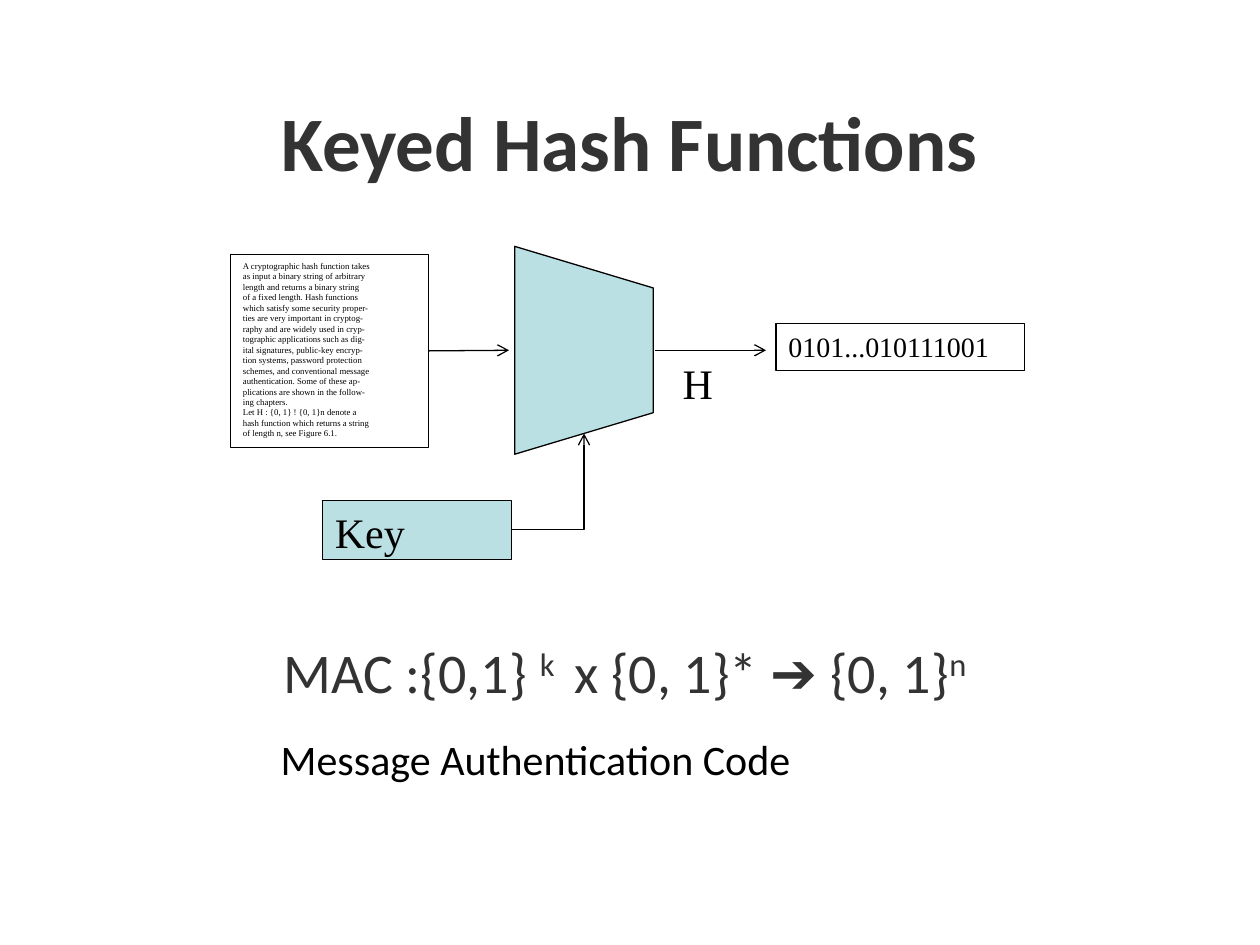
from lxml.etree import SubElement
from pptx import Presentation
from pptx.dml.color import RGBColor
from pptx.enum.shapes import MSO_CONNECTOR as CONN, MSO_SHAPE as SHAPE
from pptx.enum.text import MSO_ANCHOR as ANCHOR, PP_ALIGN as ALIGN
from pptx.oxml.ns import qn
from pptx.util import Inches, Pt

# Content
TITLE = "Keyed Hash Functions"
MESSAGE = [
    "A cryptographic hash function takes",
    "as input a binary string of arbitrary",
    "length and returns a binary string",
    "of a fixed length. Hash functions",
    "which satisfy some security proper-",
    "ties are very important in cryptog-",
    "raphy and are widely used in cryp-",
    "tographic applications such as dig-",
    "ital signatures, public-key encryp-",
    "tion systems, password protection",
    "schemes, and conventional message",
    "authentication. Some of these ap-",
    "plications are shown in the follow-",
    "ing chapters.",
    "Let H : {0, 1} ! {0, 1}n denote a",
    "hash function which returns a string",
    "of length n, see Figure 6.1.",
]
DIGEST = "0101...010111001"
# Runs of the formula: text, is superscript
FORMULA = [("MAC :{0,1} ", False), ("k ", True),
           (" x {0, 1}* ➔ {0, 1}", False), ("n", True)]
CAPTION = "Message Authentication Code"

THEME = {
    "sans": "Calibri", "serif": "Times New Roman",
    "ink": RGBColor(0x00, 0x00, 0x00), "heading": RGBColor(0x33, 0x33, 0x33),
    "fill": RGBColor(0xBB, 0xE0, 0xE3), "line": Pt(0.75),
    "title": 44, "formula": 32, "label": 24, "digest": 16, "message": 5,
}

# Places, in inches: left, top, width, height
MESSAGE_BOX = (1.83, 2.02, 1.57, 1.53)
DIGEST_BOX = (6.16, 2.57, 1.97, 0.37)
KEY_BOX = (2.56, 3.97, 1.5, 0.47)
HASH_BOX = (3.81, 2.23, 1.65, 1.1)  # before its quarter turn
FLOW_Y = HASH_BOX[1] + HASH_BOX[3] / 2
HASH_X = HASH_BOX[0] + HASH_BOX[2] / 2

prs = Presentation()
prs.slide_width, prs.slide_height = Inches(10), Inches(7.5)
shapes = prs.slides.add_slide(prs.slide_layouts[6]).shapes


def put_text(sp, lines, size, font="serif", color="ink", bold=False, align=ALIGN.LEFT):
    """Fill a shape; each line is a string or a list of (text, superscript) runs."""
    tf = sp.text_frame
    tf.word_wrap = True
    tf.vertical_anchor = ANCHOR.TOP
    for i, line in enumerate(lines):
        p = tf.paragraphs[0] if i == 0 else tf.add_paragraph()
        p.alignment = align
        for text, raised in [(line, False)] if isinstance(line, str) else line:
            r = p.add_run()
            r.text = text
            r.font.size, r.font.bold = Pt(THEME[size]), bold
            r.font.name, r.font.color.rgb = THEME[font], THEME[color]
            if raised:
                r.font._element.set("baseline", "30000")


def add_text(box, lines, size, **fmt):
    put_text(shapes.add_textbox(*map(Inches, box)), lines, size, **fmt)


def add_box(kind, box, filled=False):
    sp = shapes.add_shape(kind, *map(Inches, box))
    sp.shadow.inherit = False
    if filled:
        sp.fill.solid()
        sp.fill.fore_color.rgb = THEME["fill"]
    else:
        sp.fill.background()
    sp.line.color.rgb, sp.line.width = THEME["ink"], THEME["line"]
    return sp


def add_arrow(kind, start, end, source=None):
    cx = shapes.add_connector(kind, *map(Inches, start + end))
    if source is not None:
        cx.begin_connect(source, 3)
    cx.line.color.rgb, cx.line.width = THEME["ink"], THEME["line"]
    SubElement(cx.line._get_or_add_ln(), qn("a:tailEnd"), type="arrow")
    SubElement(cx._element.spPr, qn("a:effectLst"))
    return cx


# Title
add_text((0.75, 0.7, 8.5, 1.25), [TITLE], "title",
         font="sans", color="heading", bold=True, align=ALIGN.CENTER)

# Message, hash function and digest
message = add_box(SHAPE.RECTANGLE, MESSAGE_BOX)
put_text(message, MESSAGE, "message")
add_arrow(CONN.STRAIGHT, (3.4, FLOW_Y), (4.04, FLOW_Y), source=message)
hash_fn = add_box(SHAPE.FLOWCHART_MANUAL_OPERATION, HASH_BOX, filled=True)
hash_fn.rotation = 270
add_arrow(CONN.STRAIGHT, (5.2, FLOW_Y), (6.08, FLOW_Y))
add_text((5.32, 2.79, 0.6, 0.48), ["H"], "label")
put_text(add_box(SHAPE.RECTANGLE, DIGEST_BOX), [DIGEST], "digest")

# Key, with a one-bend arrow up into the hash function
key = add_box(SHAPE.FLOWCHART_PROCESS, KEY_BOX, filled=True)
put_text(key, ["Key"], "label")
bend = add_arrow(CONN.ELBOW, (4.06, 4.21), (HASH_X, 3.44), source=key)
bend._element.spPr.find(qn("a:prstGeom")).set("prst", "bentConnector2")

# Formula and its name
add_text((1.46, 5.01, 7, 0.87), [FORMULA], "formula",
         font="sans", color="heading", align=ALIGN.CENTER)
add_text((2.13, 5.77, 6, 0.5), [CAPTION], "label", font="sans")

prs.save("out.pptx")
